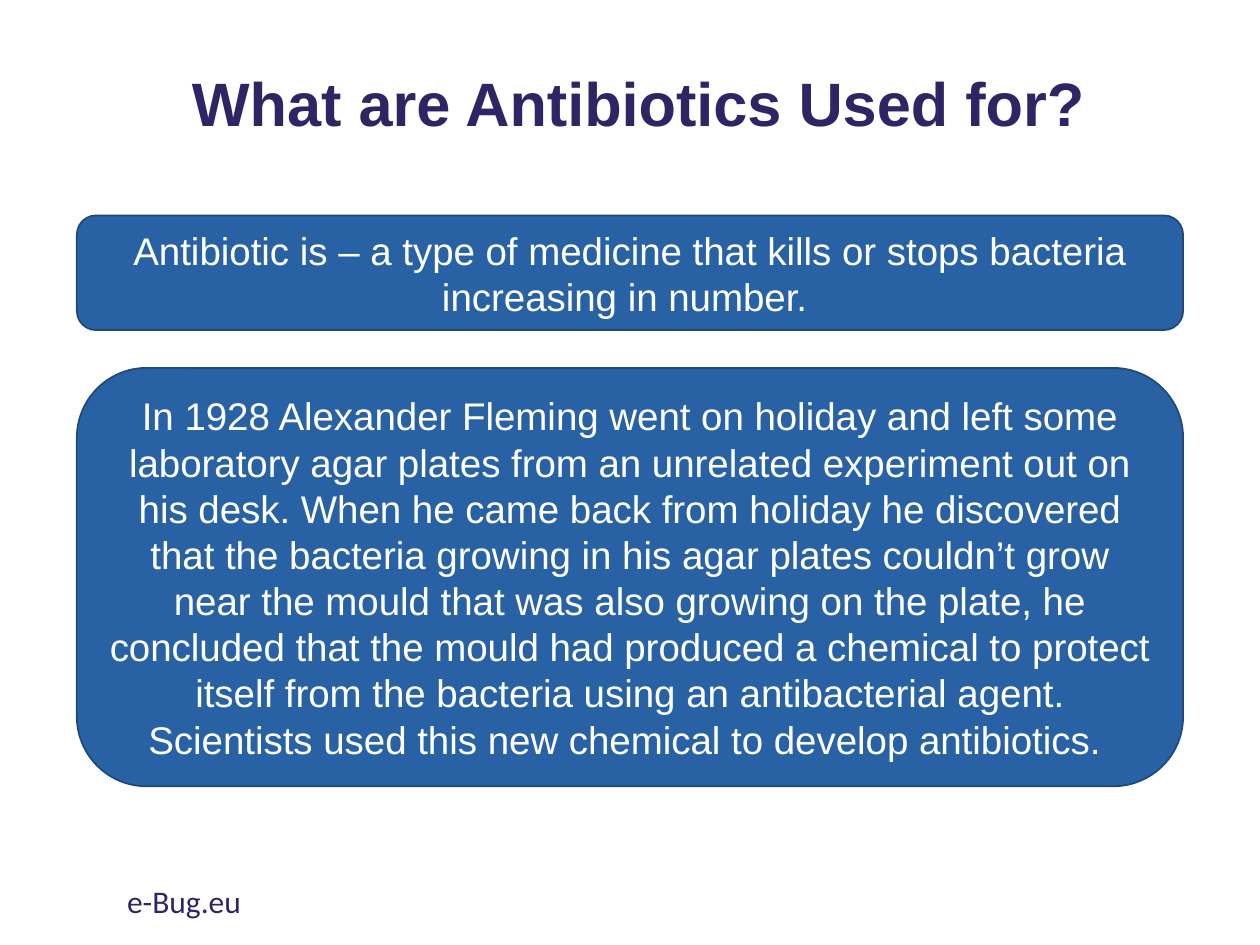
from dataclasses import dataclass

from pptx import Presentation
from pptx.dml.color import RGBColor
from pptx.enum.shapes import MSO_SHAPE
from pptx.enum.text import MSO_ANCHOR, PP_ALIGN
from pptx.util import Inches, Pt

ROUNDED = MSO_SHAPE.ROUNDED_RECTANGLE
TOP, MIDDLE = MSO_ANCHOR.TOP, MSO_ANCHOR.MIDDLE
LEFT, CENTER = PP_ALIGN.LEFT, PP_ALIGN.CENTER

SLIDE_WIDTH, SLIDE_HEIGHT = 10, 7.5
PANEL_MARGIN = 0.61
PANEL_TOP = 1.71
PANEL_GAP = 0.3

TITLE = "What are Antibiotics Used for?"
FOOTER = "e-Bug.eu"
PANELS = [
    (0.91, "Antibiotic is – a type of medicine that kills or stops bacteria "
           "increasing in number. "),
    (3.32, "In 1928 Alexander Fleming went on holiday and left some laboratory "
           "agar plates from an unrelated experiment out on his desk. When he "
           "came back from holiday he discovered that the bacteria growing in "
           "his agar plates couldn’t grow near the mould that was also growing "
           "on the plate, he concluded that the mould had produced a chemical "
           "to protect itself from the bacteria using an antibacterial agent. "
           "Scientists used this new chemical to develop antibiotics. "),
]


@dataclass(frozen=True)
class Theme:
    ink: str = "302564"
    panel: str = "2862A5"
    outline: str = "1E497A"
    panel_text: str = "FFFFFF"
    main_font: str = "Arial"
    footer_font: str = "Calibri"
    title_size: int = 35
    body_size: int = 22
    footer_size: int = 18


THEME = Theme()


def write(shape, text, font_name, size, color, align=CENTER, anchor=MIDDLE):
    """Put one styled paragraph into a shape and return it."""
    frame = shape.text_frame
    frame.word_wrap = True
    frame.vertical_anchor = anchor
    frame.text = text
    para = frame.paragraphs[0]
    para.alignment = align
    font = para.runs[0].font
    font.name = font_name
    font.size = Pt(size)
    font.color.rgb = RGBColor.from_string(color)
    return para


def add_title(page):
    box = page.shapes.add_textbox(*map(Inches, (0.76, 0.39, 8.62, 0.91)))
    para = write(box, TITLE, THEME.main_font, THEME.title_size, THEME.ink)
    para.line_spacing = 0.9
    para.runs[0].font.bold = True


def add_panel(page, top, height, text):
    width = SLIDE_WIDTH - 2 * PANEL_MARGIN
    area = map(Inches, (PANEL_MARGIN, top, width, height))
    panel = page.shapes.add_shape(ROUNDED, *area)
    panel.shadow.inherit = False
    panel.fill.solid()
    panel.fill.fore_color.rgb = RGBColor.from_string(THEME.panel)
    panel.line.color.rgb = RGBColor.from_string(THEME.outline)
    panel.line.width = Pt(1)
    write(panel, text, THEME.main_font, THEME.body_size, THEME.panel_text)


def add_footer(page):
    box = page.shapes.add_textbox(*map(Inches, (0.91, 6.95, 3.38, 0.4)))
    write(box, FOOTER, THEME.footer_font, THEME.footer_size, THEME.ink, LEFT, TOP)


def main():
    deck = Presentation()
    deck.slide_width = Inches(SLIDE_WIDTH)
    deck.slide_height = Inches(SLIDE_HEIGHT)
    page = deck.slides.add_slide(deck.slide_layouts[6])

    add_title(page)
    top = PANEL_TOP
    for height, text in PANELS:
        add_panel(page, top, height, text)
        top += height + PANEL_GAP
    add_footer(page)

    deck.save("out.pptx")


if __name__ == "__main__":
    main()
